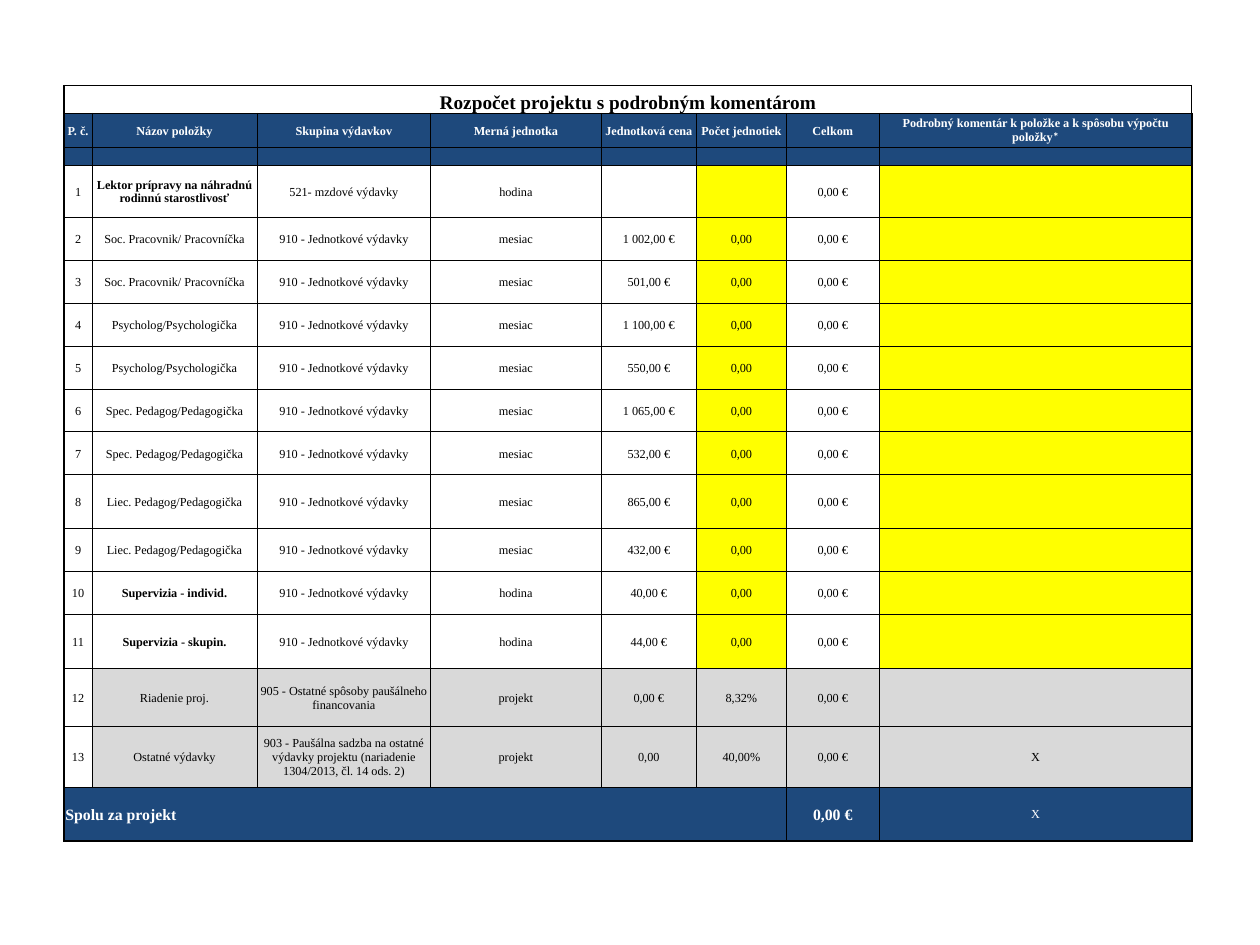
"""Build a one-slide project budget table with detailed comments."""
import lxml.etree
import pptx
import pptx.dml.color
import pptx.enum.text
import pptx.oxml.ns
import pptx.util

Inches = pptx.util.Inches
Align = pptx.enum.text.PP_ALIGN
Anchor = pptx.enum.text.MSO_ANCHOR
hex_color = pptx.dml.color.RGBColor.from_string
qn = pptx.oxml.ns.qn
NAVY, YELLOW, GRAY, WHITE, BLACK = "1E497C", "FFFF00", "D9D9D9", "FFFFFF", "000000"


def write_cell(cell, text, fill=WHITE, color=BLACK, size=7, bold=False,
               align=Align.CENTER, anchor=Anchor.MIDDLE, mark=""):
    """Fill a cell and write its text, with an optional closing mark."""
    cell.fill.solid()
    cell.fill.fore_color.rgb = hex_color(fill)
    cell.margin_left = cell.margin_right = cell.margin_top = Inches(0.01)
    cell.margin_bottom = 0
    cell.vertical_anchor = anchor
    para = cell.text_frame.paragraphs[0]
    para.alignment = align
    for part, font_name in ((text, "Times New Roman"), (mark, "Calibri")):
        if part:
            span = para.add_run()
            span.text = part
            span.font.name = font_name
            span.font.size = pptx.util.Pt(size)
            span.font.bold = bold
            span.font.color.rgb = hex_color(color)
    if not text:
        lxml.etree.SubElement(para._p, qn("a:endParaRPr"), sz=str(size * 100))


def draw_borders(cell, **widths):
    """Draw the borders of a cell, with widths in points by side letter."""
    properties = cell._tc.get_or_add_tcPr()
    for position, side in enumerate("LRTB"):
        line = lxml.etree.Element(qn(f"a:ln{side}"), w=str(pptx.util.Pt(widths[side])))
        solid = lxml.etree.SubElement(line, qn("a:solidFill"))
        lxml.etree.SubElement(solid, qn("a:srgbClr"), val=BLACK)
        properties.insert(position, line)


column_widths = [0.22, 1.31, 1.38, 1.35, 0.76, 0.71, 0.74, 2.48]
row_heights = [0.22, 0.27, 0.14, 0.42, *[0.34] * 6, 0.43, 0.34, 0.34, 0.43, 0.46, 0.48, 0.43]
headings = ["P. č.", "Názov položky", "Skupina výdavkov", "Merná jednotka", "Jednotková cena",
            "Počet jednotiek", "Celkom", "Podrobný komentár k položke a k spôsobu výpočtu položky"]
unit_costs = "910 - Jednotkové výdavky"
items = [
    ("Lektor prípravy na náhradnú rodinnú starostlivosť", "521- mzdové výdavky", "hodina", "", ""),
    ("Soc. Pracovnik/ Pracovníčka", unit_costs, "mesiac", "1 002,00 €", "0,00"),
    ("Soc. Pracovnik/ Pracovníčka", unit_costs, "mesiac", "501,00 €", "0,00"),
    ("Psycholog/Psychologička", unit_costs, "mesiac", "1 100,00 €", "0,00"),
    ("Psycholog/Psychologička", unit_costs, "mesiac", "550,00 €", "0,00"),
    ("Spec. Pedagog/Pedagogička", unit_costs, "mesiac", "1 065,00 €", "0,00"),
    ("Spec. Pedagog/Pedagogička", unit_costs, "mesiac", "532,00 €", "0,00"),
    ("Liec. Pedagog/Pedagogička", unit_costs, "mesiac", "865,00 €", "0,00"),
    ("Liec. Pedagog/Pedagogička", unit_costs, "mesiac", "432,00 €", "0,00"),
    ("Supervizia - individ.", unit_costs, "hodina", "40,00 €", "0,00"),
    ("Supervizia - skupin.", unit_costs, "hodina", "44,00 €", "0,00"),
    ("Riadenie proj.", "905 - Ostatné spôsoby paušálneho financovania", "projekt", "0,00 €", "8,32%"),
    ("Ostatné výdavky", "903 - Paušálna sadzba na ostatné výdavky projektu "
     "(nariadenie 1304/2013, čl. 14 ods. 2)", "projekt", "0,00", "40,00%"),
]
bold_items = (1, 10, 11)
last_row, last_column = len(row_heights) - 1, len(column_widths) - 1

deck = pptx.Presentation()
deck.slide_width, deck.slide_height = Inches(10), Inches(7.5)
page = deck.slides.add_slide(deck.slide_layouts[6])
budget = page.shapes.add_table(
    len(row_heights), len(column_widths), Inches(0.51), Inches(0.68),
    Inches(sum(column_widths)), Inches(sum(row_heights))).table
budget.first_row = budget.horz_banding = False
for column, width in zip(budget.columns, column_widths):
    column.width = Inches(width)
for row, height in zip(budget.rows, row_heights):
    row.height = Inches(height)

write_cell(budget.cell(0, 0), "Rozpočet projektu s podrobným komentárom",
           size=11, bold=True, anchor=Anchor.BOTTOM)
for column, heading in enumerate(headings):
    write_cell(budget.cell(1, column), heading, fill=NAVY, color=WHITE, bold=True,
               mark="*" if column == last_column else "")
    write_cell(budget.cell(2, column), "", fill=NAVY)

for number, item in enumerate(items, start=1):
    flat_rate = number >= 12
    values = [str(number), *item, "0,00 €", "X" if number == 13 else ""]
    for column, value in enumerate(values):
        if column == 0:
            fill = WHITE
        elif flat_rate:
            fill = GRAY
        else:
            fill = YELLOW if column in (5, 7) else WHITE
        write_cell(budget.cell(number + 2, column), value, fill=fill,
                   bold=column == 1 and number in bold_items)

write_cell(budget.cell(last_row, 0), "Spolu za projekt", fill=NAVY, color=WHITE,
           size=9, bold=True, align=Align.LEFT)
write_cell(budget.cell(last_row, 6), "0,00 €", fill=NAVY, color=WHITE, size=9, bold=True)
write_cell(budget.cell(last_row, 7), "X", fill=NAVY, color=WHITE)

for row in range(last_row + 1):
    for column in range(last_column + 1):
        draw_borders(budget.cell(row, column),
                     L=1 if column == 0 else 0.5, R=1 if column == last_column else 0.5,
                     T=1 if row == 0 else 0.5, B=1 if row == last_row else 0.5)
budget.cell(0, 0).merge(budget.cell(0, last_column))
budget.cell(last_row, 0).merge(budget.cell(last_row, 5))

deck.save("out.pptx")
